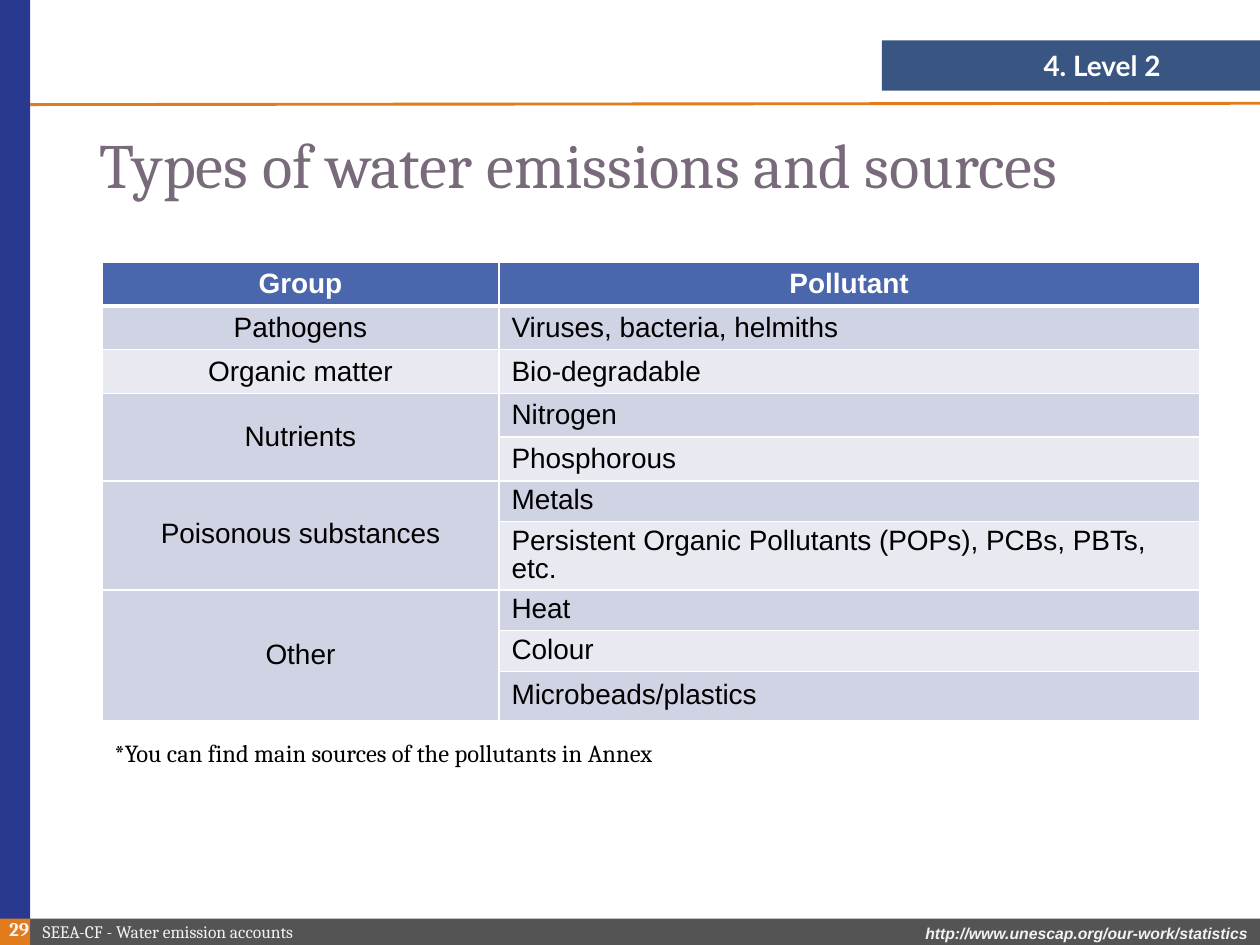
from dataclasses import dataclass

from lxml import etree
from pptx import Presentation
from pptx import util as u
from pptx.dml.color import RGBColor
from pptx.enum import shapes, text
from pptx.oxml import ns

COLORS = {
    "navy": "072C62", "grey": "545454", "blue": "2A3990", "orange": "E17B1C",
    "plum": "78697B", "pale": "F2F2F2", "white": "FFFFFF", "black": "000000",
    "header": "4A66AC", "band": "D0D3E3", "light": "E9EAF1",
}
LEFT, CENTER, RIGHT = text.PP_ALIGN.LEFT, text.PP_ALIGN.CENTER, text.PP_ALIGN.RIGHT
TOP, MIDDLE = text.MSO_ANCHOR.TOP, text.MSO_ANCHOR.MIDDLE


@dataclass
class Bar:
    at: tuple[float, float, float, float]
    color: str
    opacity: int = 100


@dataclass
class Label:
    at: tuple[float, float, float, float]
    words: str
    font: dict
    color: str
    align: int = LEFT
    anchor: int = MIDDLE
    spacing: float = 1.0


@dataclass
class Group:
    name: str
    pollutants: list[str]
    spacing: float = 1.0
    pollutant_spacing: float = 1.0


BARS = [
    Bar((7, 0.32, 3, 0.4), "navy", 80),
    Bar((0.24, 7.29, 9.76, 0.21), "grey"),
    Bar((0, 0, 0.24, 7.5), "blue"),
    Bar((0, 7.29, 0.24, 0.21), "orange"),
]
LABELS = [
    Label((6.26, 7.28, 3.74, 0.25), "http://www.unescap.org/our-work/statistics",
          {"name": "Arial", "size": u.Pt(9), "bold": True, "italic": True}, "pale", RIGHT, TOP),
    Label((0.69, 0.89, 8.96, 0.89), "Types of water emissions and sources",
          {"name": "Cambria", "size": u.Pt(36)}, "plum", spacing=0.9),
    Label((0.24, 7.29, 2.99, 0.2), "SEEA-CF - Water emission accounts",
          {"name": "Cambria", "size": u.Pt(10)}, "pale"),
    Label((-0.07, 7.22, 0.4, 0.31), "29",
          {"name": "Cambria", "size": u.Pt(11), "bold": True}, "pale", RIGHT),
    Label((7, 0.33, 2.31, 0.37), "4. Level 2",
          {"name": "Lato", "size": u.Pt(16), "bold": True}, "white", RIGHT),
    Label((0.81, 5.81, 8.71, 0.34), "*You can find main sources of the pollutants in Annex",
          {"name": "Cambria", "size": u.Pt(14)}, "black", anchor=TOP),
]
GROUPS = [
    Group("Pathogens", ["Viruses, bacteria, helmiths"]),
    Group("Organic matter", ["Bio-degradable"]),
    Group("Nutrients", ["Nitrogen", "Phosphorous"]),
    Group("Poisonous substances",
          ["Metals", "Persistent Organic Pollutants (POPs), PCBs, PBTs, etc."], 0.9, 0.9),
    Group("Other", ["Heat", "Colour", "Microbeads/plastics"], 1.0, 0.9),
]
COLUMN_WIDTHS = [3.15, 5.56]
ROW_HEIGHTS = [0.33] * 5 + [0.3] * 4 + [0.39]


def rgb(color: str) -> RGBColor:
    return RGBColor.from_string(COLORS[color])


def write(frame, words: str, font: dict, color: str, align: int, spacing: float) -> None:
    para = frame.paragraphs[0]
    para.alignment = align
    para.line_spacing = spacing
    span = para.add_run()
    span.text = words
    for key, value in font.items():
        setattr(span.font, key, value)
    span.font.color.rgb = rgb(color)


def draw_bar(page, bar: Bar) -> None:
    box = page.shapes.add_shape(shapes.MSO_SHAPE.RECTANGLE, *map(u.Inches, bar.at))
    box.shadow.inherit = False
    box.fill.solid()
    box.fill.fore_color.rgb = rgb(bar.color)
    box.line.fill.background()
    if bar.opacity < 100:
        tint = box.fill._xPr.find(".//" + ns.qn("a:srgbClr"))
        etree.SubElement(tint, ns.qn("a:alpha"), val=str(bar.opacity * 1000))


def draw_rule(page) -> None:
    rule = page.shapes.add_connector(
        shapes.MSO_CONNECTOR.STRAIGHT, *map(u.Inches, (0.24, 0.83, 10, 0.82)))
    rule.line.color.rgb = rgb("orange")
    rule.line.width = u.Pt(1.65)
    etree.SubElement(rule._element.spPr, ns.qn("a:effectLst"))


def draw_label(page, label: Label) -> None:
    frame = page.shapes.add_textbox(*map(u.Inches, label.at)).text_frame
    frame.word_wrap = True
    frame.vertical_anchor = label.anchor
    write(frame, label.words, label.font, label.color, label.align, label.spacing)


def set_borders(cell, widths: dict[str, float]) -> None:
    props = cell._tc.get_or_add_tcPr()
    for place, (side, width) in enumerate(widths.items()):
        line = etree.Element(ns.qn(f"a:ln{side}"), w=str(u.Pt(width)))
        fill = etree.SubElement(line, ns.qn("a:solidFill"))
        etree.SubElement(fill, ns.qn("a:srgbClr"), val=COLORS["white"])
        props.insert(place, line)


def fill_cell(table, row: int, column: int, words: str, spacing: float = 1.0) -> None:
    cell = table.cell(row, column)
    header = row == 0
    cell.vertical_anchor = MIDDLE
    cell.fill.solid()
    cell.fill.fore_color.rgb = rgb("header" if header else "band" if row % 2 else "light")
    align = CENTER if header or column == 0 else LEFT
    write(cell.text_frame, words, {"name": "Arial", "size": u.Pt(16), "bold": header},
          "white" if header else "black", align, spacing)


def draw_table(page) -> None:
    table = page.shapes.add_table(
        len(ROW_HEIGHTS), len(COLUMN_WIDTHS), *map(u.Inches, (0.81, 2.08, 8.71, 3.21))).table
    for column, width in zip(table.columns, COLUMN_WIDTHS):
        column.width = u.Inches(width)
    for row, height in zip(table.rows, ROW_HEIGHTS):
        row.height = u.Inches(height)

    # Heading row, then one block of rows per group
    for column, words in enumerate(["Group", "Pollutant"]):
        fill_cell(table, 0, column, words)
    start = 1
    for group in GROUPS:
        end = start + len(group.pollutants) - 1
        if end > start:
            table.cell(start, 0).merge(table.cell(end, 0))
        fill_cell(table, start, 0, group.name, group.spacing)
        for row, pollutant in enumerate(group.pollutants, start):
            fill_cell(table, row, 1, pollutant, group.pollutant_spacing)
        start = end + 1

    # White grid, heavier under the heading
    for row in range(len(ROW_HEIGHTS)):
        for column in range(len(COLUMN_WIDTHS)):
            set_borders(table.cell(row, column), {
                "L": 1, "R": 1, "T": 3 if row == 1 else 1, "B": 3 if row == 0 else 1})


def main() -> None:
    deck = Presentation()
    deck.slide_width, deck.slide_height = u.Inches(10), u.Inches(7.5)
    page = deck.slides.add_slide(deck.slide_layouts[6])
    # Frame of the page
    for bar in BARS:
        draw_bar(page, bar)
    draw_rule(page)
    # Content
    draw_table(page)
    for label in LABELS:
        draw_label(page, label)
    deck.save("out.pptx")


if __name__ == "__main__":
    main()
